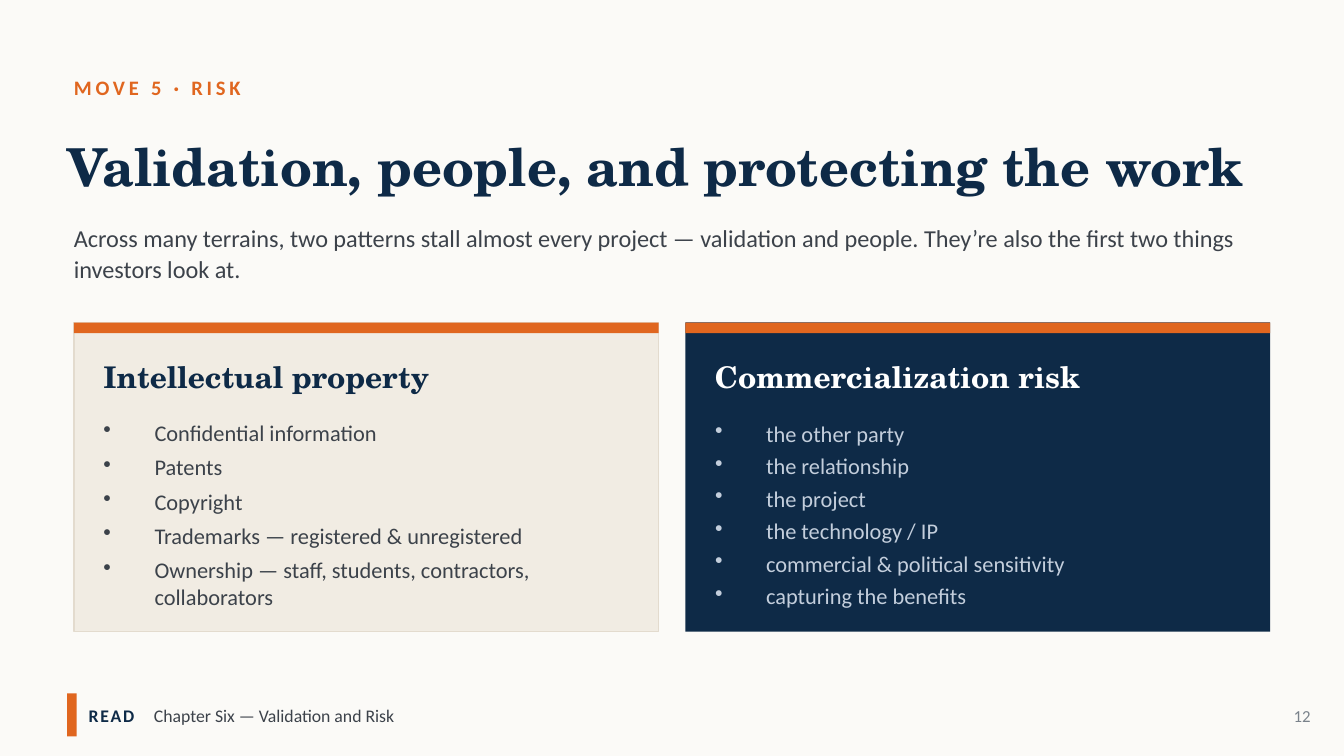
from lxml import etree
from pptx import Presentation
from pptx import util as u
from pptx.dml.color import RGBColor
from pptx.enum import shapes, text
from pptx.oxml.ns import qn

NAVY, ORANGE, INK, WHITE = "0E2A47", "E0661F", "3C424A", "FFFFFF"
SAND, SAND_EDGE, MIST, GREY, PAPER = "F1ECE3", "E3DBCE", "C3CEDC", "7A828B", "FBFAF7"
SERIF, SANS = "TeX Gyre Schola", "Calibri"

MARGIN, CARD_TOP, CARD_WIDTH, CARD_HEIGHT, CARD_GAP = 39.6, 172.8, 313.2, 165.6, 14.4
CARD_PADDING = 15.84

CARDS = [
    {
        "heading": "Intellectual property",
        "items": ["Confidential information", "Patents", "Copyright",
                  "Trademarks — registered & unregistered",
                  "Ownership — staff, students, contractors, collaborators"],
        "fill": SAND, "edge": SAND_EDGE, "heading_color": NAVY,
        "item_color": INK, "space_after": 4,
    },
    {
        "heading": "Commercialization risk",
        "items": ["the other party", "the relationship", "the project",
                  "the technology / IP", "commercial & political sensitivity",
                  "capturing the benefits"],
        "fill": NAVY, "edge": None, "heading_color": WHITE,
        "item_color": MIST, "space_after": 3,
    },
]


def color(value):
    return RGBColor.from_string(value)


def style(size, hue, name=SANS, bold=False, spacing=0):
    return {"font": {"size": u.Pt(size), "name": name, "bold": bold},
            "color": hue, "spacing": spacing}


class Deck:
    def __init__(self, width, height):
        self.presentation = Presentation()
        self.presentation.slide_width = u.Pt(width)
        self.presentation.slide_height = u.Pt(height)
        self.slide = None

    def add_slide(self, background):
        self.slide = self.presentation.slides.add_slide(self.presentation.slide_layouts[5])
        fill = self.slide.background.fill
        fill.solid()
        fill.fore_color.rgb = color(background)

    def rectangle(self, left, top, width, height, fill, edge=None):
        shape = self.slide.shapes.add_shape(
            shapes.MSO_SHAPE.RECTANGLE, *map(u.Pt, (left, top, width, height)))
        shape.shadow.inherit = False
        shape.fill.solid()
        shape.fill.fore_color.rgb = color(fill)
        if edge:
            shape.line.color.rgb = color(edge)
            shape.line.width = u.Pt(0.75)
        else:
            shape.line.fill.background()

    def prepare_frame(self, frame, inset=0):
        settings = {"word_wrap": True, "auto_size": text.MSO_AUTO_SIZE.NONE,
                    "vertical_anchor": text.MSO_ANCHOR.MIDDLE}
        for side in ("left", "top", "right", "bottom"):
            settings["margin_" + side] = u.Pt(inset)
        for name, value in settings.items():
            setattr(frame, name, value)

    def add_text(self, paragraph, content, look, **layout):
        for name, value in layout.items():
            setattr(paragraph, name, value)
        run = paragraph.add_run()
        run.text = content
        for name, value in look["font"].items():
            setattr(run.font, name, value)
        run.font.color.rgb = color(look["color"])
        if look["spacing"]:
            run._r.get_or_add_rPr().set("spc", str(look["spacing"] * 100))

    def title(self, left, top, width, height, content, look, **layout):
        shape = self.slide.shapes.title
        for name, value in zip(("left", "top", "width", "height"), (left, top, width, height)):
            setattr(shape, name, u.Pt(value))
        self.prepare_frame(shape.text_frame)
        self.add_text(shape.text_frame.paragraphs[0], content, look,
                      alignment=text.PP_ALIGN.LEFT, **layout)

    def text_frame(self, left, top, width, height, inset=0):
        box = self.slide.shapes.add_textbox(*map(u.Pt, (left, top, width, height)))
        self.prepare_frame(box.text_frame, inset)
        return box.text_frame

    def label(self, left, top, width, height, content, look, inset=0, **layout):
        paragraph = self.text_frame(left, top, width, height, inset).paragraphs[0]
        self.add_text(paragraph, content, look, **layout)

    def bullets(self, left, top, width, height, items, look, space_after):
        frame = self.text_frame(left, top, width, height)
        for index, item in enumerate(items):
            paragraph = frame.add_paragraph() if index else frame.paragraphs[0]
            properties = paragraph._p.get_or_add_pPr()
            indent = u.Pt(27.36)
            properties.set("marL", str(indent))
            properties.set("indent", str(-indent))
            etree.SubElement(properties, qn("a:buChar")).set("char", "•")
            self.add_text(paragraph, item, look, space_after=u.Pt(space_after))

    def card(self, left, card):
        self.rectangle(left, CARD_TOP, CARD_WIDTH, CARD_HEIGHT, card["fill"], card["edge"])
        self.rectangle(left, CARD_TOP, CARD_WIDTH, 5.76, ORANGE)
        inner = left + CARD_PADDING
        self.label(inner, CARD_TOP + 14.4, 280.8, 28.8, card["heading"],
                   style(16, card["heading_color"], SERIF, bold=True))
        self.bullets(inner, CARD_TOP + 48.96, 284.4, 108, card["items"],
                     style(12, card["item_color"]), card["space_after"])

    def reading(self, left, top, width, height, tag, chapter):
        """Add the reading reference: a bold tag, a tab stop, then the chapter."""
        self.rectangle(36, 371.52, 5.04, 23.04, ORANGE)
        paragraph = self.text_frame(left, top, width, height).paragraphs[0]
        tabs = etree.SubElement(paragraph._p.get_or_add_pPr(), qn("a:tabLst"))
        tab = etree.SubElement(tabs, qn("a:tab"))
        tab.set("pos", str(u.Pt(35)))
        tab.set("algn", "l")
        self.add_text(paragraph, tag, style(9.5, NAVY, bold=True, spacing=1))
        self.add_text(paragraph, "\t" + chapter, style(9.5, INK))


def main():
    deck = Deck(720, 405)
    deck.add_slide(PAPER)
    deck.label(MARGIN, 36, 432, 21.6, "MOVE 5 · RISK",
               style(11, ORANGE, bold=True, spacing=2))
    deck.title(36, 59.04, 648, 64.8, "Validation, people, and protecting the work",
               style(28, NAVY, SERIF, bold=True), line_spacing=u.Pt(28.6))
    deck.label(MARGIN, 115.2, 640.8, 39.6,
               "Across many terrains, two patterns stall almost every project — validation "
               "and people. They’re also the first two things investors look at.",
               style(13, INK), line_spacing=u.Pt(17))
    for index, card in enumerate(CARDS):
        deck.card(MARGIN + index * (CARD_WIDTH + CARD_GAP), card)
    deck.reading(47.52, 369.36, 446.4, 27.36, "READ", "Chapter Six — Validation and Risk")
    deck.label(673.2, 372.96, 36, 21.6, "12", style(9, GREY), inset=7.2,
               alignment=text.PP_ALIGN.RIGHT)
    deck.presentation.save("out.pptx")


if __name__ == "__main__":
    main()
